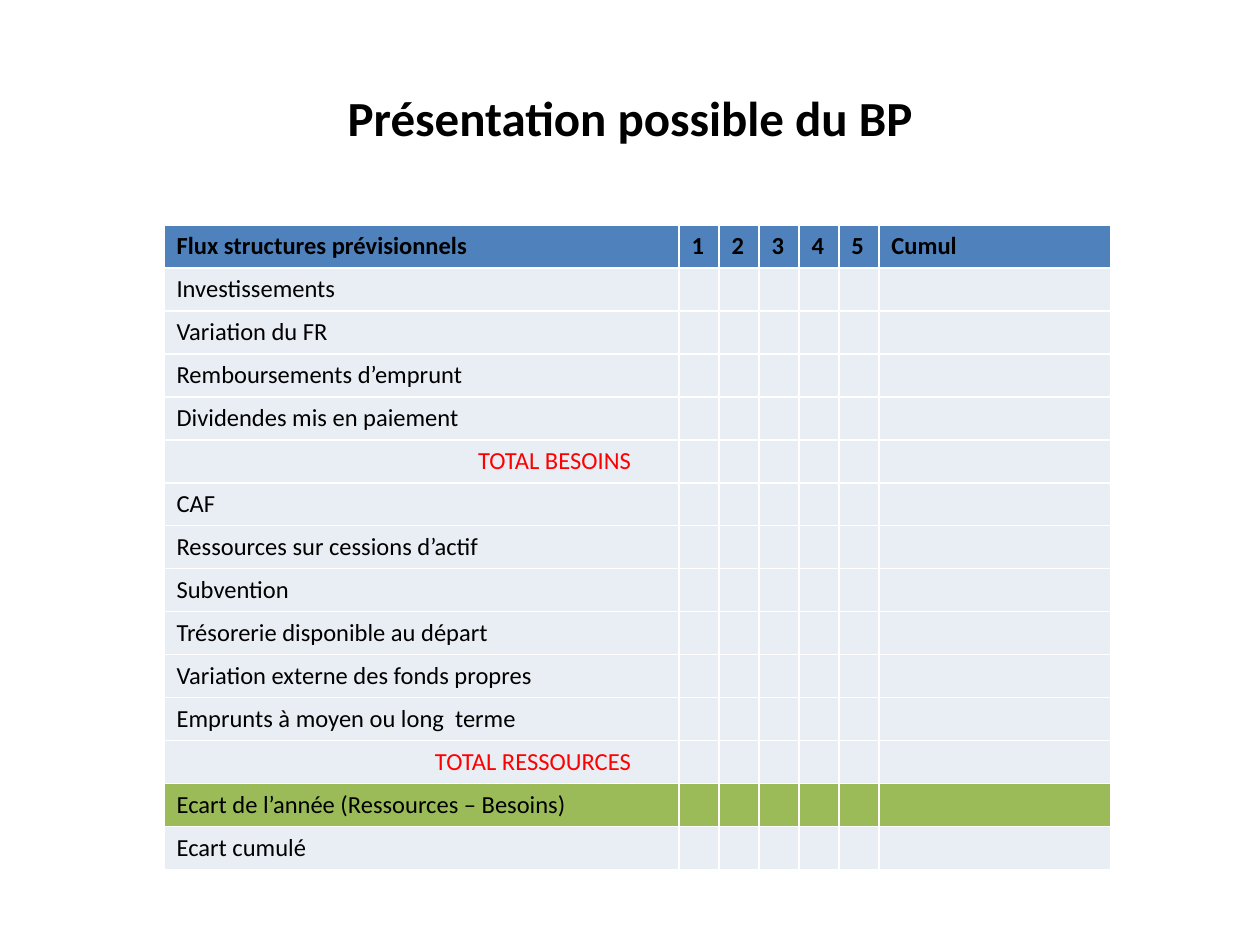
from lxml import etree
from pptx import Presentation
from pptx import util as u
from pptx.dml.color import RGBColor
from pptx.enum import text
from pptx.oxml.ns import qn

# Content
TITLE = "Présentation possible du BP"
HEADER = ["Flux structures prévisionnels", "1", "2", "3", "4", "5", "Cumul"]
LINES = [
    "Investissements",
    "Variation du FR",
    "Remboursements d’emprunt",
    "Dividendes mis en paiement",
    "TOTAL BESOINS",
    "CAF",
    "Ressources sur cessions d’actif",
    "Subvention",
    "Trésorerie disponible au départ",
    "Variation externe des fonds propres",
    "Emprunts à moyen ou long  terme",
    "TOTAL RESSOURCES",
    "Ecart de l’année (Ressources – Besoins)",
    "Ecart cumulé",
]
TOTALS = {"TOTAL BESOINS", "TOTAL RESSOURCES"}
RESULT = "Ecart de l’année (Ressources – Besoins)"

# Look
BLACK = RGBColor(0x00, 0x00, 0x00)
RED = RGBColor(0xFF, 0x00, 0x00)
WHITE = RGBColor(0xFF, 0xFF, 0xFF)
BLUE = RGBColor(0x4F, 0x81, 0xBD)
PALE = RGBColor(0xE9, 0xED, 0xF4)
GREEN = RGBColor(0x9B, 0xBB, 0x59)
FONT = "Calibri"
CELL_SIZE = u.Pt(14)

# Geometry in px
SCALE = u.Inches(1) / 126
TITLE_BOX = (63, 38, 1134, 158)
TABLE_LEFT, TABLE_TOP = 164, 225
COL_WIDTHS = [515] + [40] * 5 + [232]
ROW_HEIGHT = 43
TOTAL_INDENT = 48


def px(n):
    return u.Emu(round(n * SCALE))


def add_text(p, words, **fmt):
    r = p.add_run()
    r.text = words
    color = fmt.pop("color", BLACK)
    for name, value in {"name": FONT, **fmt}.items():
        setattr(r.font, name, value)
    r.font.color.rgb = color


def set_borders(cell):
    tcPr = cell._tc.get_or_add_tcPr()
    for side in ("lnL", "lnR", "lnT", "lnB"):
        ln = etree.SubElement(tcPr, qn(f"a:{side}"), w=str(u.Pt(1)))
        fill = etree.SubElement(ln, qn("a:solidFill"))
        etree.SubElement(fill, qn("a:srgbClr"), val=str(WHITE))


def fill_cell(cell, words, fill, bold, total):
    set_borders(cell)
    cell.fill.solid()
    cell.fill.fore_color.rgb = fill
    p = cell.text_frame.paragraphs[0]
    if not words:
        # An empty cell keeps the row at the text size
        etree.SubElement(p._p, qn("a:endParaRPr"), sz=str(int(CELL_SIZE.pt * 100)))
        return
    if total:
        p.alignment = text.PP_ALIGN.RIGHT
        cell.margin_right = px(TOTAL_INDENT)
    add_text(p, words, size=CELL_SIZE, bold=bold, color=RED if total else BLACK)


def main():
    prs = Presentation()
    prs.slide_width, prs.slide_height = u.Inches(10), u.Inches(7.5)
    s = prs.slides.add_slide(prs.slide_layouts[5])

    # Title
    sp = s.shapes.title
    sp.left, sp.top, sp.width, sp.height = map(px, TITLE_BOX)
    tf = sp.text_frame
    tf.vertical_anchor = text.MSO_ANCHOR.MIDDLE
    p = tf.paragraphs[0]
    p.alignment = text.PP_ALIGN.CENTER
    add_text(p, TITLE, size=u.Pt(28), bold=True)

    # Table
    rows = [HEADER] + [[line] + [""] * (len(HEADER) - 1) for line in LINES]
    table = s.shapes.add_table(
        len(rows), len(HEADER), px(TABLE_LEFT), px(TABLE_TOP),
        px(sum(COL_WIDTHS)), px(ROW_HEIGHT * len(rows))).table
    table.horz_banding = False
    for col, width in zip(table.columns, COL_WIDTHS):
        col.width = px(width)
    for i, row in enumerate(rows):
        table.rows[i].height = px(ROW_HEIGHT)
        fill = BLUE if i == 0 else GREEN if row[0] == RESULT else PALE
        for j, words in enumerate(row):
            fill_cell(table.cell(i, j), words, fill, i == 0, words in TOTALS)

    prs.save("out.pptx")


if __name__ == "__main__":
    main()
